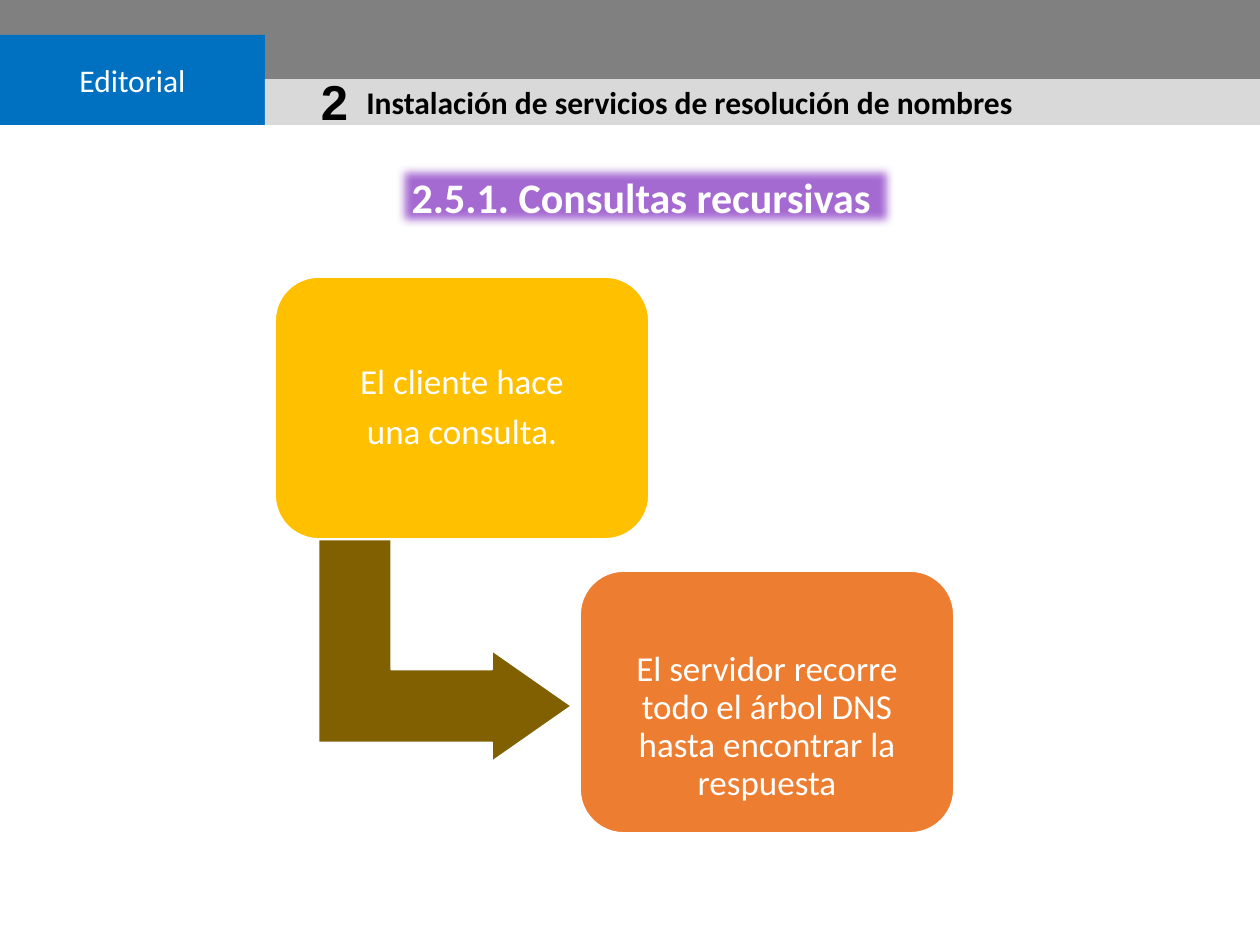
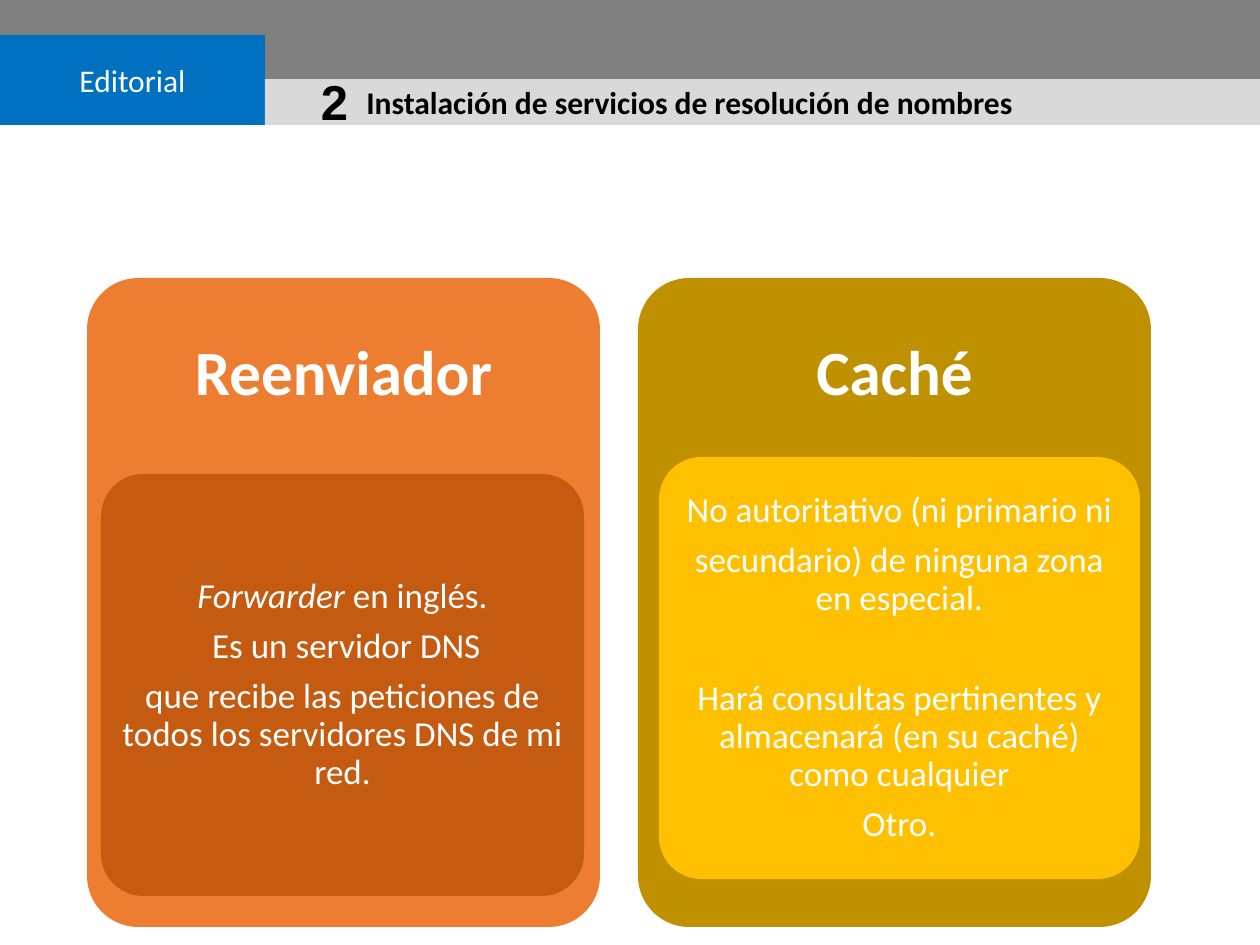
import pptx
import pptx.dml.color
import pptx.enum.shapes
import pptx.enum.text
import pptx.util
from lxml import etree
from pptx.oxml.ns import qn

EMU_PER_PX = 914400 / 126
COLORS = {
    "white": "FFFFFF", "black": "000000", "band": "808080", "strip": "D9D9D9",
    "brand": "0070C0", "title": "A66BD3", "arrow": "806000", "gold": "FFC000",
    "orange": "ED7D31", "rust": "C55A11", "olive": "BF9000",
}
FONT = "Calibri"
SHAPES = pptx.enum.shapes.MSO_SHAPE
MIDDLE = pptx.enum.text.MSO_ANCHOR.MIDDLE
TOP = pptx.enum.text.MSO_ANCHOR.TOP
CENTER = pptx.enum.text.PP_ALIGN.CENTER
LEFT = pptx.enum.text.PP_ALIGN.LEFT


def px(length):
    return pptx.util.Emu(round(length * EMU_PER_PX))


def rgb(name):
    return pptx.dml.color.RGBColor.from_string(COLORS[name])


def add_block(page, kind, area, fill, outline=None, corners=()):
    block = page.shapes.add_shape(kind, *map(px, area))
    block.shadow.inherit = False
    block.fill.solid()
    block.fill.fore_color.rgb = rgb(fill)
    if outline:
        block.line.color.rgb = rgb(outline)
        block.line.width = pptx.util.Pt(1)
    else:
        block.line.fill.background()
    for index, value in enumerate(corners):
        block.adjustments[index] = value
    return block


def add_textbox(page, area):
    return page.shapes.add_textbox(*map(px, area))


def write(box, paragraphs, size, color="white", bold=False, font=FONT,
          align=CENTER, anchor=MIDDLE, wrap=True):
    """Fill a box; a paragraph given as a pair opens with an italic span."""
    frame = box.text_frame
    frame.word_wrap = wrap
    frame.vertical_anchor = anchor
    for index, content in enumerate(paragraphs):
        para = frame.paragraphs[0] if index == 0 else frame.add_paragraph()
        spans = [content] if isinstance(content, str) else content
        para.alignment = align
        for position, words in enumerate(spans):
            span = para.add_run()
            span.text = words
            span.font.name = font
            span.font.size = pptx.util.Pt(size)
            span.font.bold = bold
            span.font.italic = len(spans) > 1 and position == 0
            span.font.color.rgb = rgb(color)


def set_insets(box, side, top, bottom):
    frame = box.text_frame
    frame.margin_left = frame.margin_right = px(side)
    frame.margin_top, frame.margin_bottom = px(top), px(bottom)


def space_lines(box, size):
    for para in box.text_frame.paragraphs:
        para.line_spacing = 0.9
        para.space_after = pptx.util.Pt(size * 0.35)


def add_header(page):
    """Bands, publisher tag and chapter heading shared by every slide."""
    add_block(page, SHAPES.RECTANGLE, (0, 0, 1260, 121), "band")
    brand = add_block(page, SHAPES.RECTANGLE, (0, 35, 265, 90), "brand")
    write(brand, ["Editorial"], 18)
    add_block(page, SHAPES.RECTANGLE, (265, 79, 995, 46), "strip")
    number = add_block(page, SHAPES.RECTANGLE, (270, 81, 129, 39), "strip")
    write(number, ["2"], 28, "black", bold=True, font="Arial")
    chapter = add_textbox(page, (354, 77, 833, 50))
    write(chapter, ["Instalación de servicios de resolución de nombres"], 18,
          "black", bold=True, align=LEFT, anchor=TOP)


def set_title(page, words, area):
    """Place the title on a filled strip with soft edges."""
    title = page.shapes.title
    title.left, title.top, title.width, title.height = map(px, area)
    title.fill.solid()
    title.fill.fore_color.rgb = rgb("title")
    write(title, [words], 24, bold=True, anchor=TOP, wrap=False)
    title.text_frame.auto_size = pptx.enum.text.MSO_AUTO_SIZE.NONE
    effects = etree.SubElement(title.element.spPr, qn("a:effectLst"))
    etree.SubElement(effects, qn("a:softEdge"), rad="63500")


def add_step(page, left, top, fill, paragraphs, extra_top=0):
    step = add_block(page, SHAPES.ROUNDED_RECTANGLE, (left, top, 374, 262),
                     fill, "white", (0.167,))
    write(step, paragraphs, 20)
    set_insets(step, 10, 10 + extra_top, 10)
    space_lines(step, 20)


def add_card(page, left, fill, heading, panel_area, panel_fill, paragraphs):
    """A tall card with a heading and an inner panel, which is returned."""
    add_block(page, SHAPES.ROUNDED_RECTANGLE, (left, 278, 513, 649), fill,
              corners=(0.1,))
    label = add_textbox(page, (left, 278, 513, 195))
    write(label, [heading], 36, bold=True)
    set_insets(label, 19, 19, 19)
    space_lines(label, 36)
    panel = add_block(page, SHAPES.ROUNDED_RECTANGLE, panel_area, panel_fill,
                      corners=(0.1,))
    write(panel, paragraphs, 20)
    set_insets(panel, 8, 5, 5)
    space_lines(panel, 20)
    return panel


def build_recursive_queries(deck):
    page = deck.slides.add_slide(deck.slide_layouts[5])
    add_header(page)
    set_title(page, "2.5.1. Consultas recursivas ", (397, 165, 498, 63))
    arrow = add_block(page, SHAPES.BENT_UP_ARROW, (334, 524, 222, 253),
                      "arrow", "white", (0.328, 0.25, 0.358))
    arrow.rotation = 90
    add_step(page, 275, 277, "gold", ["El cliente hace", "una consulta."])
    add_step(page, 580, 571, "orange",
             ["El servidor recorre todo el árbol DNS hasta encontrar la respuesta"],
             extra_top=50)


def build_server_types(deck):
    page = deck.slides.add_slide(deck.slide_layouts[6])
    add_header(page)
    add_card(page, 87, "orange", "Reenviador", (101, 474, 483, 422), "rust", [
        ("Forwarder", " en inglés."),
        " Es un servidor DNS",
        "que recibe las peticiones de todos los servidores DNS de mi red.",
    ])
    cache = add_card(page, 638, "olive", "Caché", (659, 457, 481, 422), "gold", [
        "No autoritativo (ni primario ni",
        "secundario) de ninguna zona en especial.",
        "Hará consultas pertinentes y almacenará (en su caché) como cualquier",
        "Otro.",
    ])
    # Separate the two statements about the cache
    cache.text_frame.paragraphs[2].space_before = pptx.util.Pt(28.5)


def main():
    deck = pptx.Presentation()
    deck.slide_width, deck.slide_height = px(1260), px(945)
    build_recursive_queries(deck)
    build_server_types(deck)
    deck.save("out.pptx")


if __name__ == "__main__":
    main()
